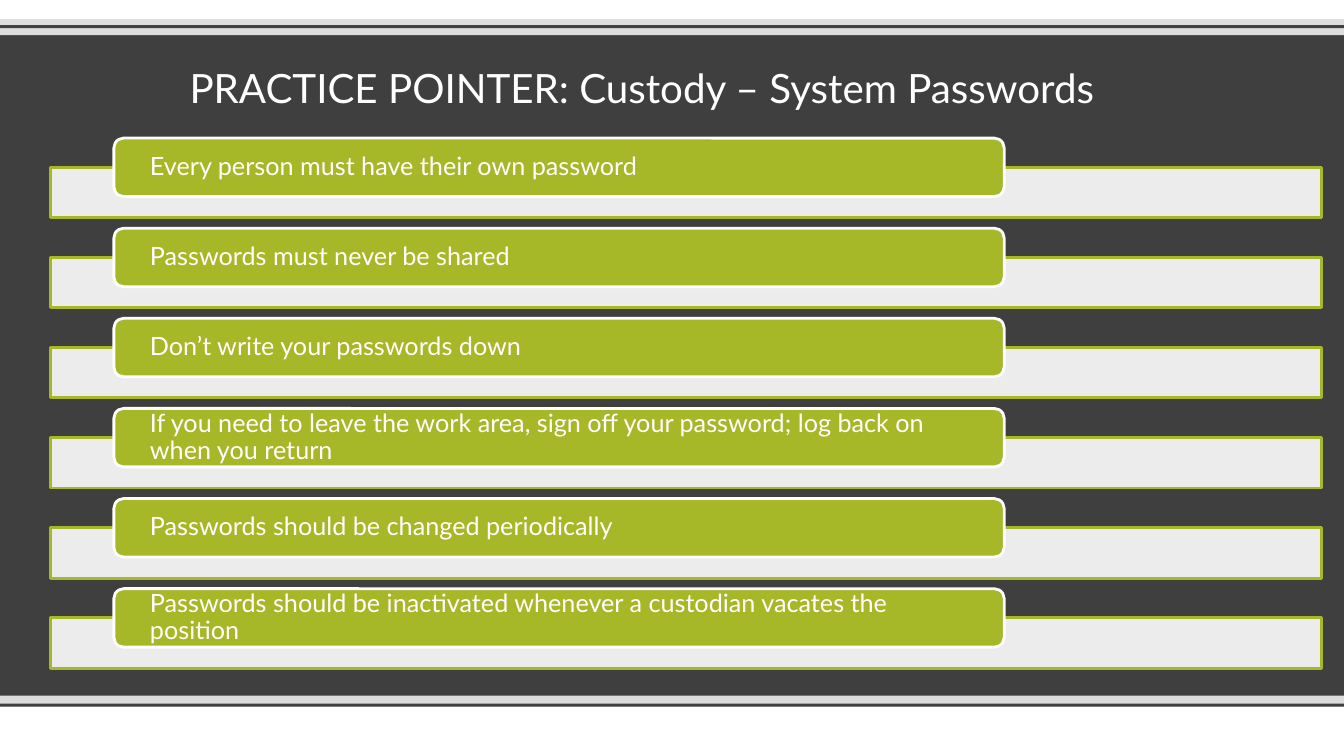
"""Build a slide of six password rules on staggered bars."""
import pptx
import pptx.util
import pptx.dml.color
import pptx.enum.shapes
import pptx.enum.text
from lxml import etree

Inches, Pt = pptx.util.Inches, pptx.util.Pt
MSO_SHAPE = pptx.enum.shapes.MSO_SHAPE
MSO_ANCHOR = pptx.enum.text.MSO_ANCHOR
PP_ALIGN = pptx.enum.text.PP_ALIGN

TITLE = "PRACTICE POINTER: Custody – System Passwords"
RULES = [
    "Every person must have their own password",
    "Passwords must never be shared",
    "Don’t write your passwords down",
    "If you need to leave the work area, sign off your password; log back on when you return",
    "Passwords should be changed periodically",
    "Passwords should be inactivated whenever a custodian vacates the position",
]
FONT = "Lato"
WHITE, GREEN, DARK, GREY, EDGE = "FFFFFF", "A6B727", "3F3F3F", "DDDDDD", "404040"
BANDS = [
    (7, 0.5, WHITE), (6.9, 0.11, GREY), (6.98, 0.03, EDGE),
    (0, 0.19, WHITE), (0.19, 0.16, GREY), (0.25, 0.03, EDGE),
]
WIDTH, HEIGHT = 13.33, 7.5
FIRST_TOP, LAST_TOP = 1.37, 5.84
BAR_DROP = 0.29


def rgb(value):
    """Turn a hex string into a colour."""
    return pptx.dml.color.RGBColor.from_string(value)


def add_box(s, kind, box, fill, line=None):
    """Add a flat shape with a fill and an optional outline."""
    sp = s.shapes.add_shape(kind, *map(Inches, box))
    sp.shadow.inherit = False
    sp.fill.solid()
    sp.fill.fore_color.rgb = rgb(fill)
    if line:
        sp.line.color.rgb = rgb(line)
        sp.line.width = Pt(2)
    else:
        sp.line.fill.background()
    return sp


def set_alpha(sp, percent):
    """Make the fill of a shape partly transparent."""
    color = sp.fill._xPr.find(".//" + pptx.oxml.ns.qn("a:srgbClr"))
    etree.SubElement(color, pptx.oxml.ns.qn("a:alpha"), val=str(percent * 1000))


def set_text(sp, text, size):
    """Write one white left-aligned paragraph, centred vertically."""
    tf = sp.text_frame
    tf.text = text
    tf.word_wrap = True
    tf.auto_size = pptx.enum.text.MSO_AUTO_SIZE.NONE
    tf.vertical_anchor = MSO_ANCHOR.MIDDLE
    p = tf.paragraphs[0]
    p.alignment = PP_ALIGN.LEFT
    p.line_spacing = 0.9
    p.font.name = FONT
    p.font.size = Pt(size)
    p.font.color.rgb = rgb(WHITE)
    return tf


def add_rule(s, text, top):
    """Add a pale bar with a green label overlapping it."""
    bar = add_box(s, MSO_SHAPE.RECTANGLE, (0.5, top + BAR_DROP, 12.61, 0.5), WHITE, GREEN)
    set_alpha(bar, 90)
    label = add_box(s, MSO_SHAPE.ROUNDED_RECTANGLE, (1.13, top, 8.83, 0.58), GREEN, WHITE)
    tf = set_text(label, text, 18)
    tf.margin_left = tf.margin_right = Inches(0.33)
    tf.margin_top = tf.margin_bottom = 0


def main():
    """Build and save the slide."""
    prs = pptx.Presentation()
    prs.slide_width, prs.slide_height = Inches(WIDTH), Inches(HEIGHT)
    s = prs.slides.add_slide(prs.slide_layouts[5])
    s.background.fill.solid()
    s.background.fill.fore_color.rgb = rgb(DARK)

    for top, height, color in BANDS:
        add_box(s, MSO_SHAPE.RECTANGLE, (0, top, WIDTH, height), color)

    title = s.shapes.title
    title.left, title.top, title.width, title.height = map(Inches, (1.78, 0.55, 11.33, 0.7))
    set_text(title, TITLE, 28.8)

    pitch = (LAST_TOP - FIRST_TOP) / (len(RULES) - 1)
    for i, rule in enumerate(RULES):
        add_rule(s, rule, FIRST_TOP + i * pitch)

    prs.save("out.pptx")


if __name__ == "__main__":
    main()
